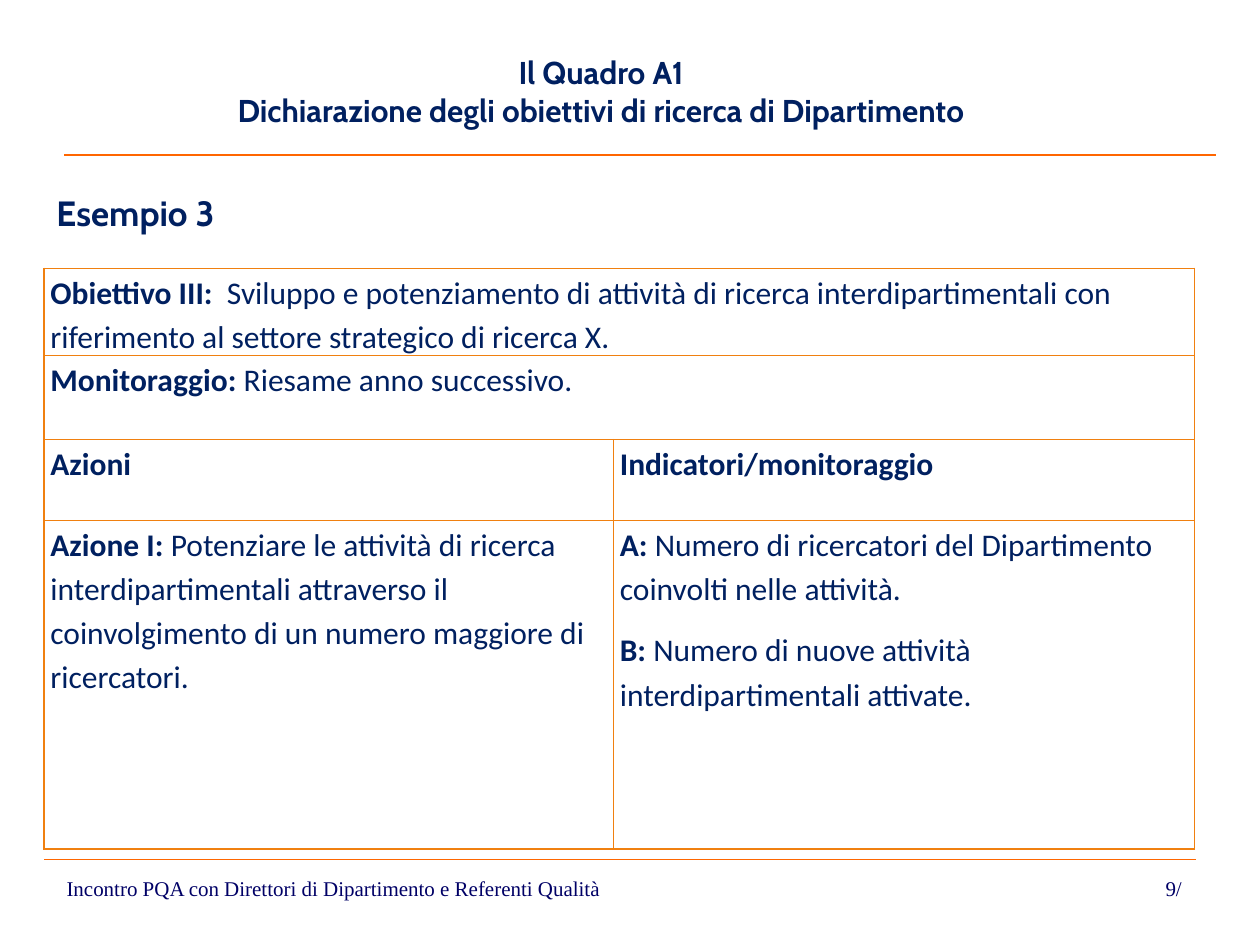
import pptx
import pptx.dml.color
import pptx.enum.shapes
import pptx.enum.text
import pptx.oxml
import pptx.util
from lxml import etree

ALIGN = pptx.enum.text.PP_ALIGN
NAMESPACE = "http://schemas.openxmlformats.org/drawingml/2006/main"
NAVY, FOOTER_BLUE, RULE_ORANGE, BORDER_ORANGE = "002060", "000066", "FF6600", "F08010"
inches = pptx.util.Inches


def color(value):
    return pptx.dml.color.RGBColor.from_string(value)


def write(paragraph, runs, font_format, **paragraph_format):
    """Add (text, bold) runs and apply the font and paragraph formats."""
    for name, value in paragraph_format.items():
        setattr(paragraph, name, value)
    for text, bold in runs:
        run = paragraph.add_run()
        run.text = text
        run.font.bold = bold
        run.font.color.rgb = color(font_format["color"])
        for name in ("name", "size"):
            setattr(run.font, name, font_format[name])


title_font = {"name": "Cabin", "size": pptx.util.Pt(18), "color": NAVY}
heading_font = {**title_font, "size": pptx.util.Pt(20)}
table_font = {**title_font, "name": "Calibri"}
footer_font = {"name": "Times New Roman", "size": pptx.util.Pt(12), "color": FOOTER_BLUE}

presentation = pptx.Presentation()
presentation.slide_width, presentation.slide_height = inches(10), inches(7.5)
slide = presentation.slides.add_slide(presentation.slide_layouts[5])

# Title
title = slide.shapes.title
title_place = {"left": 1.15, "top": 0.37, "width": 7.24, "height": 0.7}
for name, value in title_place.items():
    setattr(title, name, inches(value))
title.text_frame.vertical_anchor = pptx.enum.text.MSO_ANCHOR.MIDDLE
title_lines = ["Il Quadro A1", "Dichiarazione degli obiettivi di ricerca di Dipartimento"]
for index, line in enumerate(title_lines):
    frame = title.text_frame
    paragraph = frame.add_paragraph() if index else frame.paragraphs[0]
    write(paragraph, [(line, True)], title_font, alignment=ALIGN.CENTER)

# Rules under the title and above the footer
RULE_WIDTH = 9.14
for left, top in [(0.51, 1.23), (0.35, 6.82)]:
    rule = slide.shapes.add_connector(
        pptx.enum.shapes.MSO_CONNECTOR.STRAIGHT,
        inches(left), inches(top), inches(left + RULE_WIDTH), inches(top))
    rule.line.color.rgb = color(RULE_ORANGE)
    rule.line.width = pptx.util.Pt(0.75)
    etree.SubElement(rule._element.spPr, f"{{{NAMESPACE}}}effectLst")

# Heading and footer
labels = [
    ("Esempio 3", (0.35, 1.47, 9.36, 0.5), heading_font, True, ALIGN.LEFT),
    ("Incontro PQA con Direttori di Dipartimento e Referenti Qualità",
     (0.43, 6.9, 7.5, 0.36), footer_font, False, ALIGN.LEFT),
    ("9/", (8.94, 6.9, 0.75, 0.3), footer_font, False, ALIGN.CENTER),
]
for text, place, font_format, bold, alignment in labels:
    frame = slide.shapes.add_textbox(*map(inches, place)).text_frame
    frame.word_wrap = True
    write(frame.paragraphs[0], [(text, bold)], font_format, alignment=alignment)

# Table: each cell is a list of paragraphs, each a (bold label, plain text) pair
rows = [
    [[("Obiettivo III:  ", "Sviluppo e potenziamento di attività di ricerca "
       "interdipartimentali con riferimento al settore strategico di ricerca X.")]],
    [[("Monitoraggio: ", "Riesame anno successivo.")]],
    [[("Azioni", "")], [("Indicatori/monitoraggio", "")]],
    [[("Azione I: ", "Potenziare le attività di ricerca interdipartimentali attraverso "
       "il coinvolgimento di un numero maggiore di ricercatori.")],
     [("A: ", "Numero di ricercatori del Dipartimento coinvolti nelle attività."),
      ("B: ", "Numero di nuove attività interdipartimentali attivate.")]],
]
column_widths = [4.52, 4.61]
row_heights = [0.69, 0.67, 0.64, 2.61]
table = slide.shapes.add_table(
    len(rows), len(column_widths), inches(0.35), inches(2.13),
    inches(sum(column_widths)), inches(sum(row_heights))).table
table.first_row = table.horz_banding = False
for column, width in zip(table.columns, column_widths):
    column.width = inches(width)
for row, height in zip(table.rows, row_heights):
    row.height = inches(height)

cell_margins = {"margin_left": 0.05, "margin_right": 0.05, "margin_top": 0, "margin_bottom": 0}
for cell in table.iter_cells():
    for name, value in cell_margins.items():
        setattr(cell, name, inches(value))
    properties = cell._tc.get_or_add_tcPr()
    for side in ("lnL", "lnR", "lnT", "lnB"):
        properties.append(pptx.oxml.parse_xml(
            f'<a:{side} xmlns:a="{NAMESPACE}" w="{pptx.util.Pt(1)}"><a:solidFill>'
            f'<a:srgbClr val="{BORDER_ORANGE}"/></a:solidFill></a:{side}>'))
    cell.fill.solid()
    cell.fill.fore_color.rgb = color("FFFFFF")

for row_index, row_cells in enumerate(rows):
    if len(row_cells) == 1:
        table.cell(row_index, 0).merge(table.cell(row_index, 1))
    for column_index, entries in enumerate(row_cells):
        frame = table.cell(row_index, column_index).text_frame
        for index, (label, text) in enumerate(entries):
            paragraph = frame.add_paragraph() if index else frame.paragraphs[0]
            runs = [(label, True), (text, False)] if text else [(label, True)]
            write(paragraph, runs, table_font,
                  line_spacing=1.15, space_after=pptx.util.Pt(10))

presentation.save("out.pptx")
